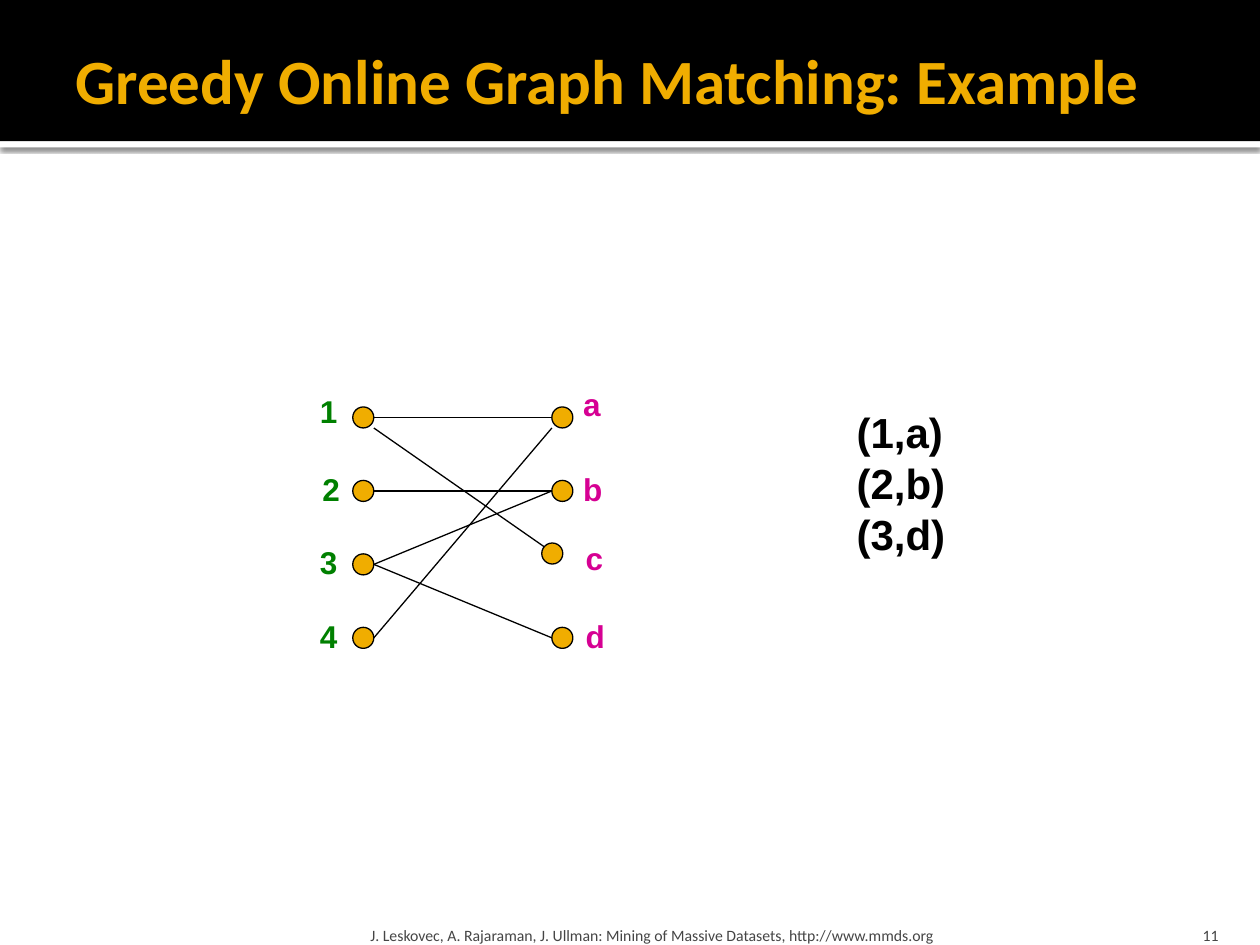
from lxml.etree import SubElement
from pptx import Presentation
from pptx.dml.color import RGBColor
from pptx.enum.shapes import MSO_CONNECTOR as Connector, MSO_SHAPE as Preset
from pptx.enum.text import MSO_ANCHOR as Anchor, MSO_AUTO_SIZE as AutoSize, PP_ALIGN as Align
from pptx.oxml.ns import qn
from pptx.util import Inches, Pt

BLACK = RGBColor(0x00, 0x00, 0x00)
WHITE = RGBColor(0xFF, 0xFF, 0xFF)
GOLD = RGBColor(0xF0, 0xAD, 0x00)
GREEN = RGBColor(0x00, 0x80, 0x00)
MAGENTA = RGBColor(0xD6, 0x00, 0x93)
GRAY = RGBColor(0x45, 0x45, 0x45)

# The slide is a grid of 100 columns and 75 rows
COLUMNS, ROWS = 100, 75
NODE = 1.67
LEFT_X, RIGHT_X = 28, 43.8
FIRST_ROW, ROW_STEP = 32.3, 5.83


def write(frame, text, font="Arial", size=18, color=BLACK, bold=True, align=Align.LEFT):
    """Put one formatted line of text into a text frame."""
    paragraph = frame.paragraphs[0]
    paragraph.alignment = align
    run = paragraph.add_run()
    run.text = text
    run.font.name = font
    run.font.size = Pt(size)
    run.font.bold = bold
    run.font.color.rgb = color


class SlideBuilder:
    def __init__(self, presentation):
        self.column = presentation.slide_width / COLUMNS
        self.row = presentation.slide_height / ROWS
        self.slide = presentation.slides.add_slide(presentation.slide_layouts[6])
        self.shapes = self.slide.shapes

    def place(self, *lengths):
        """Turn alternating columns and rows into slide units."""
        return [round(length * (self.row if index % 2 else self.column))
                for index, length in enumerate(lengths)]

    def band(self, top, height, color):
        shape = self.shapes.add_shape(Preset.RECTANGLE, *self.place(0, top, COLUMNS, height))
        shape.shadow.inherit = False
        shape.fill.solid()
        shape.fill.fore_color.rgb = color
        shape.line.fill.background()
        return shape

    def drop_shadow(self, shape, blur, distance, alpha):
        effects = shape._element.spPr.find(qn("a:effectLst"))
        shadow = SubElement(effects, qn("a:outerShdw"), blurRad=str(Pt(blur)),
                            dist=str(Pt(distance)), dir="5400000", rotWithShape="0")
        color = SubElement(shadow, qn("a:srgbClr"), val=str(BLACK))
        SubElement(color, qn("a:alpha"), val=str(alpha * 1000))

    def box(self, text, area, anchor, insets, **style):
        frame = self.shapes.add_textbox(*self.place(*area)).text_frame
        frame.word_wrap = True
        frame.vertical_anchor = anchor
        (frame.margin_left, frame.margin_top,
         frame.margin_right, frame.margin_bottom) = map(Inches, insets)
        write(frame, text, **style)

    def label(self, text, left, top, width=3.4, height=4, parent=None, **style):
        shapes = parent or self.shapes
        frame = shapes.add_textbox(*self.place(left, top, width, height)).text_frame
        frame.word_wrap = False
        frame.auto_size = AutoSize.SHAPE_TO_FIT_TEXT
        write(frame, text, **style)

    def node(self, left, top, parent=None):
        shapes = parent or self.shapes
        shape = shapes.add_shape(Preset.OVAL, *self.place(left, top, NODE, NODE))
        shape.shadow.inherit = False
        shape.fill.solid()
        shape.fill.fore_color.rgb = GOLD
        shape.line.color.rgb = BLACK
        shape.line.width = Pt(0.75)

    def edge(self, start, end, parent):
        line = parent.add_connector(Connector.STRAIGHT, *self.place(*start, *end))
        line.line.color.rgb = BLACK
        line.line.width = Pt(0.75)
        SubElement(line._element.spPr, qn("a:effectLst"))


def row_top(index):
    return FIRST_ROW + index * ROW_STEP


def left_port(index, drop=0.5):
    """Point on the right side of a left node, drop being a share of its height."""
    return LEFT_X + NODE, row_top(index) + drop * NODE


def right_port(index, drop=0.5):
    return RIGHT_X, row_top(index) + drop * NODE


def main():
    presentation = Presentation()
    presentation.slide_width, presentation.slide_height = Inches(10), Inches(7.5)
    builder = SlideBuilder(presentation)

    # Header bands and title
    strip = builder.band(11.2, 0.5, WHITE)
    builder.drop_shadow(strip, blur=2.5, distance=0.8, alpha=60)
    builder.band(0, 11.2, BLACK)
    builder.box("Greedy Online Graph Matching: Example", (5, 1.7, 95, 9.2), Anchor.MIDDLE,
                (0.1, 0.05, 0.05, 0.05), font="Calibri", size=36, color=GOLD)

    # Footer and slide number
    small = dict(font="Calibri", size=9, color=GRAY, bold=False)
    builder.box("J. Leskovec, A. Rajaraman, J. Ullman: Mining of Massive Datasets, "
                "http://www.mmds.org", (28.9, 72, 60.2, 3), Anchor.BOTTOM,
                (0.05, 0.05, 0.05, 0), **small)
    builder.box("11", (89.7, 72, 8, 3), Anchor.BOTTOM,
                (0.1, 0.05, 0.1, 0), align=Align.RIGHT, **small)

    # Left side of the graph
    for index, (left, top) in enumerate([(24.4, 30.6), (24.6, 36.8), (24.4, 42.6), (24.4, 48.5)]):
        builder.node(LEFT_X, row_top(index))
        builder.label(str(index + 1), left, top, color=GREEN)

    # Right side: each node is grouped with its edges and its label
    right_side = [
        ("a", (RIGHT_X, row_top(0)), (45.3, 30.1, 3.5),
         [(left_port(0), right_port(0)), (left_port(3), right_port(0, 1))]),
        ("b", (RIGHT_X, row_top(1)), (45.3, 36.8, 3.6),
         [(left_port(1), right_port(1)), (left_port(2), right_port(1))]),
        ("c", (43, 43.1), (45.5, 42.3, 3.4), [(left_port(0, 1), (43.2, 43.4))]),
        ("d", (RIGHT_X, row_top(3)), (45.5, 48.5, 3.6), [(left_port(2), right_port(3))]),
    ]
    for name, position, label_area, edges in right_side:
        group = builder.shapes.add_group_shape().shapes
        builder.node(*position, parent=group)
        for start, end in edges:
            builder.edge(start, end, group)
        builder.label(name, *label_area, parent=group, color=MAGENTA)

    # Matched pairs
    for index, (pair, width) in enumerate([("(1,a)", 8.9), ("(2,b)", 9.1), ("(3,d)", 9.1)]):
        builder.label(pair, 67, 31.8 + index * 4.05, width, 5, size=24)

    presentation.save("out.pptx")


if __name__ == "__main__":
    main()
